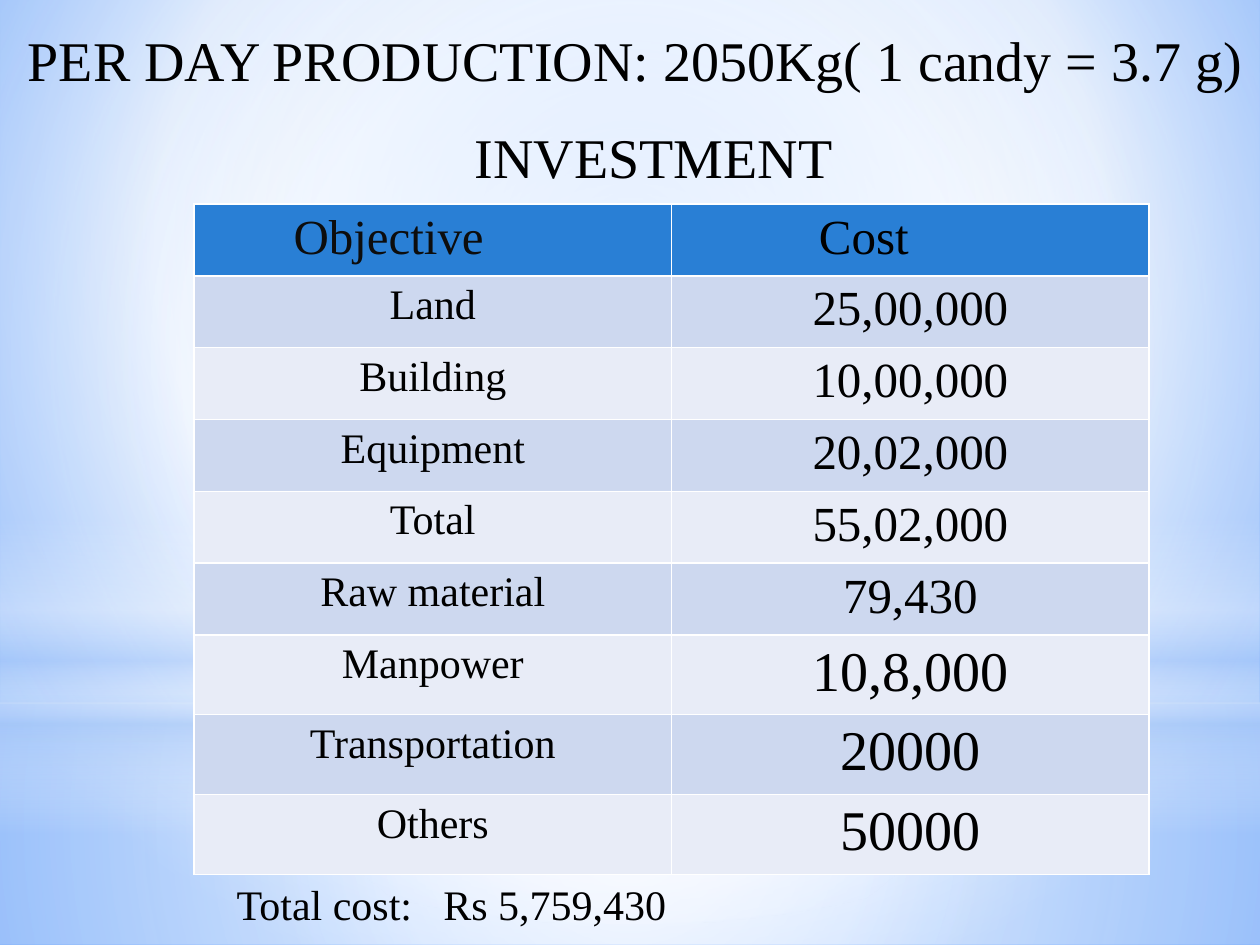
from lxml import etree
from pptx import Presentation
from pptx import util as u
from pptx.dml.color import RGBColor
from pptx.enum import shapes, text
from pptx.oxml import ns

COLORS = {
    "black": "000000", "heading": "0D0D0D", "white": "FFFFFF",
    "header": "297FD5", "odd": "CDD8EF", "even": "E8ECF7",
    "sky": "ACCBF9", "light_blue": "95C0FF", "deep_blue": "5599FF",
}
FONT = "Times New Roman"
CENTER = (50, 50, 50, 50)
COSTS = [
    ("Land", "25,00,000", 28),
    ("Building", "10,00,000", 28),
    ("Equipment", "20,02,000", 28),
    ("Total", "55,02,000", 28),
    ("Raw material", "79,430", 28),
    ("Manpower", "10,8,000", 32),
    ("Transportation", "20000", 32),
    ("Others", "50000", 32),
]


def rgb(name):
    return RGBColor.from_string(COLORS[name])


def set_gradient(properties, stops, focus=None):
    gradient = etree.Element(ns.qn("a:gradFill"), rotWithShape="1")
    stop_list = etree.SubElement(gradient, ns.qn("a:gsLst"))
    for position, color, opacity in stops:
        stop = etree.SubElement(stop_list, ns.qn("a:gs"), pos=str(position * 1000))
        shade = etree.SubElement(stop, ns.qn("a:srgbClr"), val=COLORS[color])
        if opacity < 100:
            etree.SubElement(shade, ns.qn("a:alpha"), val=str(opacity * 1000))
    if focus:
        circle = etree.SubElement(gradient, ns.qn("a:path"), path="circle")
        sides = {side: str(value * 1000) for side, value in zip("ltrb", focus)}
        etree.SubElement(circle, ns.qn("a:fillToRect"), **sides)
    else:
        etree.SubElement(gradient, ns.qn("a:lin"), ang="5400000", scaled="0")
    solid = properties.find(ns.qn("a:solidFill"))
    properties.replace(solid, gradient)


def add_glow(page, kind, top, height, stops, focus=CENTER):
    glow = page.shapes.add_shape(kind, 0, u.Inches(top), u.Inches(10), u.Inches(height))
    glow.shadow.inherit = False
    glow.line.fill.background()
    glow.fill.solid()
    set_gradient(glow.element.spPr, stops, focus)


def add_backdrop(page):
    page.background.fill.solid()
    set_gradient(
        page.element.find(".//" + ns.qn("p:bgPr")),
        [(0, "light_blue", 100), (60, "white", 100), (100, "deep_blue", 100)],
        (20, 10, 20, 60),
    )
    rectangle, oval = shapes.MSO_SHAPE.RECTANGLE, shapes.MSO_SHAPE.OVAL
    add_glow(page, rectangle, 5.58, 1.92,
             [(0, "white", 91), (37, "white", 76), (100, "sky", 79)])
    add_glow(page, rectangle, 0, 5.58,
             [(0, "white", 89), (48, "white", 62), (100, "sky", 79)])
    add_glow(page, rectangle, 4.12, 2.5,
             [(0, "white", 0), (29, "white", 30), (45, "sky", 40),
              (55, "white", 26), (65, "sky", 60), (100, "white", 0)], None)
    add_glow(page, oval, 1.75, 5.58, [(0, "white", 100), (56, "white", 0)])


def write(frame, words, size, color="black", align=text.PP_ALIGN.LEFT):
    para = frame.paragraphs[0]
    para.text = words
    para.alignment = align
    para.font.name = FONT
    para.font.size = u.Pt(size)
    para.font.bold = False
    para.font.color.rgb = rgb(color)
    return para


def set_title(page, words):
    title = page.shapes.title
    title.left, title.top = 0, u.Inches(0.1)
    title.width, title.height = u.Inches(10), u.Inches(0.71)
    frame = title.text_frame
    frame.auto_size = text.MSO_AUTO_SIZE.NONE
    frame.vertical_anchor = text.MSO_ANCHOR.TOP
    frame.margin_left, frame.margin_right = u.Inches(0.22), 0
    frame.margin_top = u.Inches(0.1)
    write(frame, words, 32)
    title.element.getparent().append(title.element)


def add_label(page, words, left, top, width, height, size):
    box = page.shapes.add_textbox(*map(u.Inches, (left, top, width, height)))
    box.text_frame.word_wrap = True
    return write(box.text_frame, words, size)


def set_tab(para, position):
    properties = para._p.get_or_add_pPr()
    tabs = etree.Element(ns.qn("a:tabLst"))
    etree.SubElement(tabs, ns.qn("a:tab"), pos=str(u.Inches(position)), algn="l")
    properties.find(ns.qn("a:defRPr")).addprevious(tabs)


def fill_cell(cell, words, size, fill, color="black", align=text.PP_ALIGN.CENTER):
    cell.fill.solid()
    cell.fill.fore_color.rgb = rgb(fill)
    write(cell.text_frame, words, size, color, align)


def add_cost_table(page):
    table = page.shapes.add_table(
        len(COSTS) + 1, 2, u.Inches(1.54), u.Inches(1.62), u.Inches(7.58), u.Inches(5.3)
    ).table
    headings = [("Objective", "heading", 0.79), ("Cost", "black", 1.17)]
    for column, (words, color, margin) in enumerate(headings):
        cell = table.cell(0, column)
        cell.margin_left = u.Inches(margin)
        fill_cell(cell, words, 28, "header", color, text.PP_ALIGN.LEFT)
    table.rows[0].height = u.Inches(0.57)
    for row, (objective, cost, size) in enumerate(COSTS, 1):
        table.rows[row].height = u.Inches(0.57 if size == 28 else 0.63)
        fill = "odd" if row % 2 else "even"
        fill_cell(table.cell(row, 0), objective, 24, fill)
        fill_cell(table.cell(row, 1), cost, size, fill)


def main():
    deck = Presentation()
    deck.slide_width, deck.slide_height = u.Inches(10), u.Inches(7.5)
    page = deck.slides.add_slide(deck.slide_layouts[5])
    add_backdrop(page)
    set_title(page, "PER DAY PRODUCTION: 2050Kg( 1 candy = 3.7 g)")
    add_label(page, "INVESTMENT", 3.67, 0.92, 3.58, 0.64, 32)
    add_cost_table(page)
    total = add_label(page, "Total cost:\tRs 5,759,430", 1.78, 6.92, 5.75, 0.5, 24)
    set_tab(total, 1.64)
    deck.save("out.pptx")


if __name__ == "__main__":
    main()
